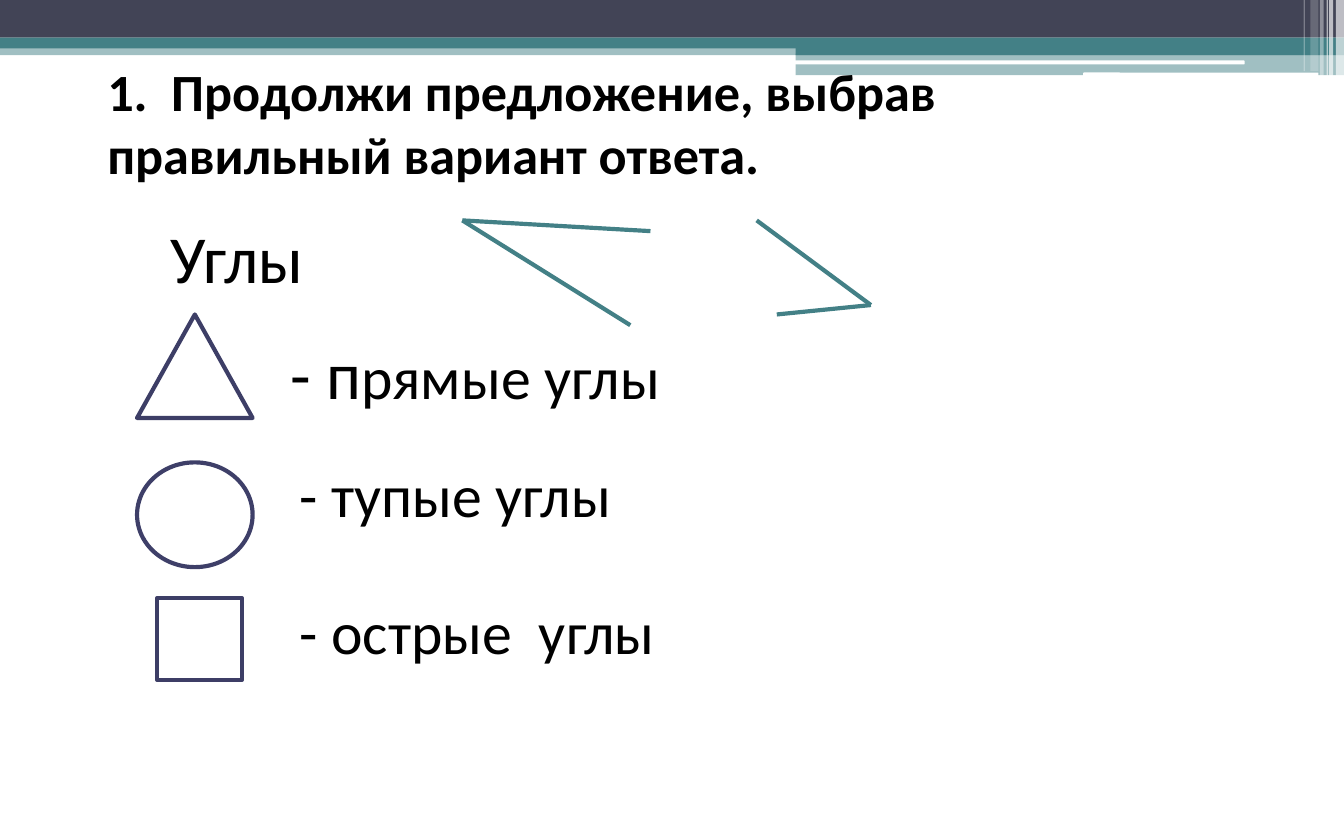
from lxml import etree
from pptx import Presentation
from pptx.dml.color import RGBColor
from pptx.enum import shapes, text
from pptx.oxml import ns
from pptx.util import Inches, Pt

COLORS = {"navy": "424456", "teal": "438086", "white": "FFFFFF",
          "outline": "3D3E66", "ellipse": "3E3F68", "text": "000000"}
SHAPE = shapes.MSO_SHAPE


def add_bar(kind, left, top, width, height, color, opacity=100):
    bar = slide.shapes.add_shape(kind, Inches(left), Inches(top), Inches(width), Inches(height))
    bar.shadow.inherit = False
    bar.line.fill.background()
    bar.fill.solid()
    bar.fill.fore_color.rgb = RGBColor.from_string(COLORS[color])
    if opacity < 100:
        tint = bar.fill._xPr.find(".//" + ns.qn("a:srgbClr"))
        etree.SubElement(tint, ns.qn("a:alpha"), val=str(opacity * 1000))


def add_label(left, top, width, height, pieces, bold=False, wrap=False):
    label = slide.shapes.add_textbox(Inches(left), Inches(top), Inches(width), Inches(height))
    frame = label.text_frame
    frame.word_wrap = wrap
    frame.auto_size = text.MSO_AUTO_SIZE.SHAPE_TO_FIT_TEXT
    for wording, size in pieces:
        run = frame.paragraphs[0].add_run()
        run.text = wording
        run.font.name = "Calibri"
        run.font.size = Pt(size)
        run.font.bold = bold
        run.font.color.rgb = RGBColor.from_string(COLORS["text"])


presentation = Presentation()
presentation.slide_width = Inches(10)
presentation.slide_height = Inches(6.25)
slide = presentation.slides.add_slide(presentation.slide_layouts[6])

for left, top, width, height, color, opacity in [
    (0, 0.33, 10, 0.08, "teal", 50),
    (0, 0, 10, 0.28, "navy", 100),
    (0, 0.28, 10, 0.08, "teal", 100),
    (5.92, 0.33, 4.08, 0.08, "teal", 100),
    (5.92, 0.4, 4.08, 0.16, "teal", 50),
]:
    add_bar(SHAPE.RECTANGLE, left, top, width, height, color, opacity)

for left, top, width in [(5.91, 0.45, 3.35), (8.06, 0.54, 1.75)]:
    add_bar(SHAPE.ROUNDED_RECTANGLE, left, top, width, 0.03, "white")

for left, width, height, opacity in [
    (9.94, 0.06, 0.57, 65),
    (9.89, 0.03, 0.57, 65),
    (9.87, 0.01, 0.57, 60),
    (9.82, 0.03, 0.57, 40),
    (9.75, 0.06, 0.53, 20),
    (9.7, 0.01, 0.53, 30),
]:
    add_bar(SHAPE.RECTANGLE, left, 0, width, height, "white", opacity)

add_label(1.17, 1.56, 1.31, 0.71, [("Углы", 36)])

angles = [
    ((3.44, 1.64), [(4.69, 2.42), (4.84, 1.72)]),
    ((6.48, 2.27), [(5.78, 2.34), (5.63, 1.64)]),
]
for vertex, ends in angles:
    for end in ends:
        side = slide.shapes.add_connector(
            shapes.MSO_CONNECTOR.STRAIGHT, *map(Inches, vertex + end))
        side.line.color.rgb = RGBColor.from_string(COLORS["teal"])
        side.line.width = Pt(2.25)
        etree.SubElement(side._element.spPr, ns.qn("a:effectLst"))

for kind, left, top, width, height, color in [
    (SHAPE.ISOSCELES_TRIANGLE, 1.02, 2.34, 0.86, 0.77, "outline"),
    (SHAPE.OVAL, 1.02, 3.44, 0.86, 0.78, "ellipse"),
    (SHAPE.RECTANGLE, 1.17, 4.45, 0.63, 0.61, "outline"),
]:
    marker = slide.shapes.add_shape(
        kind, Inches(left), Inches(top), Inches(width), Inches(height))
    marker.shadow.inherit = False
    marker.fill.background()
    marker.line.color.rgb = RGBColor.from_string(COLORS[color])
    marker.line.width = Pt(2.25)

add_label(1.95, 2.42, 3.09, 0.71, [(" - п", 36), ("рямые углы", 32)])
add_label(2.03, 3.36, 2.75, 0.64, [(" - тупые углы", 32)])
add_label(2.03, 4.38, 2.98, 0.64, [(" - острые  углы", 32)])
add_label(0.7, 0.39, 8.2, 1.04,
          [("1.  Продолжи предложение, выбрав правильный вариант ответа.", 28)],
          bold=True, wrap=True)

presentation.save("out.pptx")
